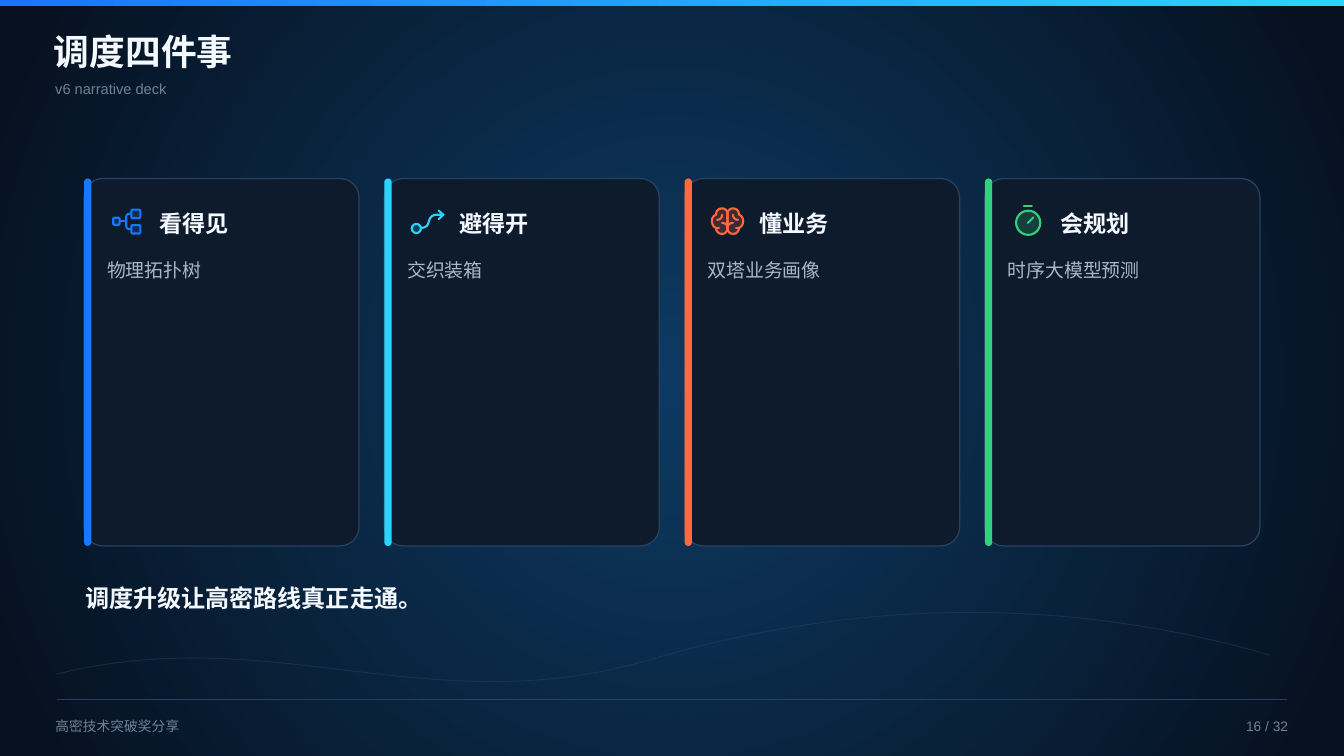
from lxml import etree
from pptx import Presentation
from pptx import util as u
from pptx.dml.color import RGBColor
from pptx.enum import shapes, text
from pptx.oxml.ns import qn

Pt = u.Pt
BLUE, CYAN, ORANGE, GREEN = "1677FF", "2AD4FF", "FF6A3D", "35D07F"
WHITE, MUTED, DIM, EDGE = "F4F8FF", "A8B7C9", "6F8198", "28415F"
RECT, ROUND, OVAL = (shapes.MSO_SHAPE.RECTANGLE, shapes.MSO_SHAPE.ROUNDED_RECTANGLE,
                     shapes.MSO_SHAPE.OVAL)

deck = Presentation()
deck.slide_width, deck.slide_height = Pt(960), Pt(540)
page = deck.slides.add_slide(deck.slide_layouts[6])


def paint(shape, fill=None, line=None, width=1.5, fill_alpha=100, line_alpha=100):
    """Set fill and outline; None leaves that part empty, alphas are percent."""
    shape.shadow.inherit = False
    for part, colour in ((shape.fill, fill), (shape.line.fill, line)):
        if colour:
            part.solid()
            part.fore_color.rgb = RGBColor.from_string(colour)
        else:
            part.background()
    if line:
        shape.line.width = Pt(width)
    properties = shape._element.spPr
    for place, alpha in (("a:solidFill", fill_alpha), ("a:ln/a:solidFill", line_alpha)):
        if alpha < 100:
            colour = properties.find("/".join(qn(tag) for tag in place.split("/")))[0]
            etree.SubElement(colour, qn("a:alpha")).set("val", str(alpha * 1000))
    return shape


def trace(steps, left=0, top=0, close=False):
    """Draw an outline: pairs are straight steps, sextets are Bezier curves."""
    points = [steps[0]]
    for step in steps[1:]:
        if len(step) == 2:
            points.append(step)
            continue
        (x0, y0), (x1, y1, x2, y2, x3, y3) = points[-1], step
        count = 12 if abs(x3 - x0) < 50 else 50
        for i in range(1, count + 1):
            t = i / count
            a, b, c, d = (1 - t) ** 3, 3 * t * (1 - t) ** 2, 3 * t * t * (1 - t), t ** 3
            points.append((a * x0 + b * x1 + c * x2 + d * x3,
                           a * y0 + b * y1 + c * y2 + d * y3))
    points = [(Pt(left + x), Pt(top + y)) for x, y in points]
    builder = page.shapes.build_freeform(*points[0])
    builder.add_line_segments(points[1:], close=close)
    return builder.convert_to_shape()


# Background with two radial glows, a wave and the top bar
paint(page.shapes.add_shape(RECT, 0, 0, Pt(960), Pt(540)), "07111F")
gradients = [(540, BLUE, BLUE, 22), (540, CYAN, CYAN, 12), (4.5, BLUE, CYAN, None)]
for height, first, last, glow in gradients:
    band = paint(page.shapes.add_shape(RECT, 0, 0, Pt(960), Pt(height)))
    band.fill.gradient()
    band.fill.gradient_angle = 0
    for stop, colour, alpha in zip(band.fill.gradient_stops, (first, last), (glow, 0)):
        stop.color.rgb = RGBColor.from_string(colour)
        if glow:
            tint = band._element.spPr.findall(".//" + qn("a:srgbClr"))[-1 if alpha == 0 else 0]
            etree.SubElement(tint, qn("a:alpha")).set("val", str(alpha * 1000))
    if glow:
        gradient = band._element.spPr.find(qn("a:gradFill"))
        linear = gradient.find(qn("a:lin"))
        circle = etree.Element(qn("a:path"), {"path": "circle"})
        etree.SubElement(circle, qn("a:fillToRect"),
                         {side: "50000" for side in ("l", "t", "r", "b")})
        gradient.replace(linear, circle)

wave = trace([(40.5, 481.5), (195, 443, 307.5, 517.5, 465, 471), (623, 424.5, 772.5, 429, 907.5, 468)])
paint(wave, line=EDGE, width=0.75, line_alpha=45)

# Icons, in points from the top left corner of their card
lobe = [(30.7, 25.2), (30.7, 23, 32.4, 21.4, 34.6, 21.4), (36.9, 21.4, 38.9, 23, 38.9, 25.9),
        (41, 26.8, 41.8, 28.3, 41.8, 30.4), (41.8, 32.5, 41, 34.5, 38.9, 35.3),
        (38.9, 37.8, 36.9, 39.6, 34.6, 39.6), (32.4, 39.6, 30.7, 37.8, 30.7, 35.3)]
folds = [[(34.6, 31.7), (32.4, 31.7, 30.7, 33.3, 30.7, 35.3)],
         [(36.7, 35.3), (38.9, 35.3)],
         [(34.6, 25.9), (34.6, 28, 36, 29.5, 38.2, 29.5)]]
brain_right = [lobe] + folds
brain_left = [[tuple(61.4 - v if i % 2 == 0 else v for i, v in enumerate(step))
               for step in steps] for steps in brain_right]

tree = ([(ROUND, 20.9, 28.1, 4.5, 5), (ROUND, 33.8, 22.3, 6.5, 6), (ROUND, 33.8, 33.3, 6.5, 6)],
        [[(25.4, 30.6), (30.2, 30.6)],
         [(33.8, 25.2), (32.4, 25.2), (31.2, 25.2, 30.2, 26.2, 30.2, 27.4), (30.2, 34),
          (30.2, 35.2, 31.2, 36.2, 32.4, 36.2), (33.8, 36.2)]])
route = ([(OVAL, 19.6, 32.4, 6.6, 6.6)],
         [[(26.4, 35.3), (29.5, 35, 31, 34, 31.7, 31), (32.8, 27, 35, 25.9, 37.5, 25.9),
           (42.3, 25.9)],
          [(38.9, 23), (42.1, 25.9), (38.9, 29)]])
brain = ([], brain_right + brain_left)
timer = ([(OVAL, 22.3, 23, 17.3, 17.3)],
         [[(30.7, 31.7), (34.7, 27.7)], [(27.9, 19.4), (33.5, 19.4)]])

# Each label: left, top, width, height, words, size, colour, bold
labels = [(38.5, 21.6, 145.5, 41, "调度四件事", 25.5, WHITE, True),
          (39.5, 56.9, 97, 16.6, "v6 narrative deck", 10.5, DIM, False),
          (61.2, 416.9, 270, 27.4, "调度升级让高密路线真正走通。", 17.2, WHITE, True),
          (39.5, 512.6, 94.3, 15.8, "高密技术突破奖分享", 9.8, DIM, False),
          (884.2, 512.6, 36, 15.8, "16 / 32", 9.8, DIM, False)]

cards = [("看得见", "物理拓扑树", BLUE, tree), ("避得开", "交织装箱", CYAN, route),
         ("懂业务", "双塔业务画像", ORANGE, brain), ("会规划", "时序大模型预测", GREEN, timer)]
top = 127.5
for i, (title, detail, accent, (outlines, strokes)) in enumerate(cards):
    left = 60 + 214.5 * i
    card = page.shapes.add_shape(ROUND, Pt(left), Pt(top), Pt(196.5), Pt(262.5))
    card.adjustments[0] = 0.069
    paint(card, "0E1B2D", EDGE, 0.9)
    stripe = page.shapes.add_shape(ROUND, Pt(left), Pt(top), Pt(5.25), Pt(262.5))
    stripe.adjustments[0] = 0.5
    paint(stripe, accent)
    for kind, x, y, width, height in outlines:
        outline = page.shapes.add_shape(kind, Pt(left + x), Pt(top + y), Pt(width), Pt(height))
        paint(outline, accent, accent, fill_alpha=20)
    for steps in strokes:
        closed = len(steps) == len(lobe)
        stroke = paint(trace(steps, left, top, closed), accent if closed else None, accent,
                       fill_alpha=20 if closed else 100)
        stroke._element.spPr.find(qn("a:ln")).set("cap", "rnd")
    labels += [(left + 53.8, 149.8, 57.6, 26.6, title, 16.5, WHITE, True),
               (left + 16.5, 185, 14.5 * len(detail), 21.6, detail, 13.5, MUTED, False)]

# Footer rule and all labels
rule = page.shapes.add_connector(shapes.MSO_CONNECTOR.STRAIGHT, Pt(40.5), Pt(499.5), Pt(919.5), Pt(499.5))
rule.line.color.rgb = RGBColor.from_string(EDGE)
rule.line.width = Pt(0.75)
etree.SubElement(rule._element.spPr, qn("a:effectLst"))

for left, top, width, height, words, size, colour, bold in labels:
    box = page.shapes.add_textbox(Pt(left), Pt(top), Pt(width), Pt(height))
    frame = box.text_frame
    frame.margin_left = frame.margin_right = frame.margin_top = frame.margin_bottom = 0
    frame.word_wrap = False
    frame.auto_size = text.MSO_AUTO_SIZE.SHAPE_TO_FIT_TEXT
    frame.text = words
    para = frame.paragraphs[0]
    if words == "16 / 32":
        para.alignment = text.PP_ALIGN.RIGHT
    font = para.runs[0].font
    font.name, font.size, font.bold = "Arial", Pt(size), bold
    font.color.rgb = RGBColor.from_string(colour)

deck.save("out.pptx")
